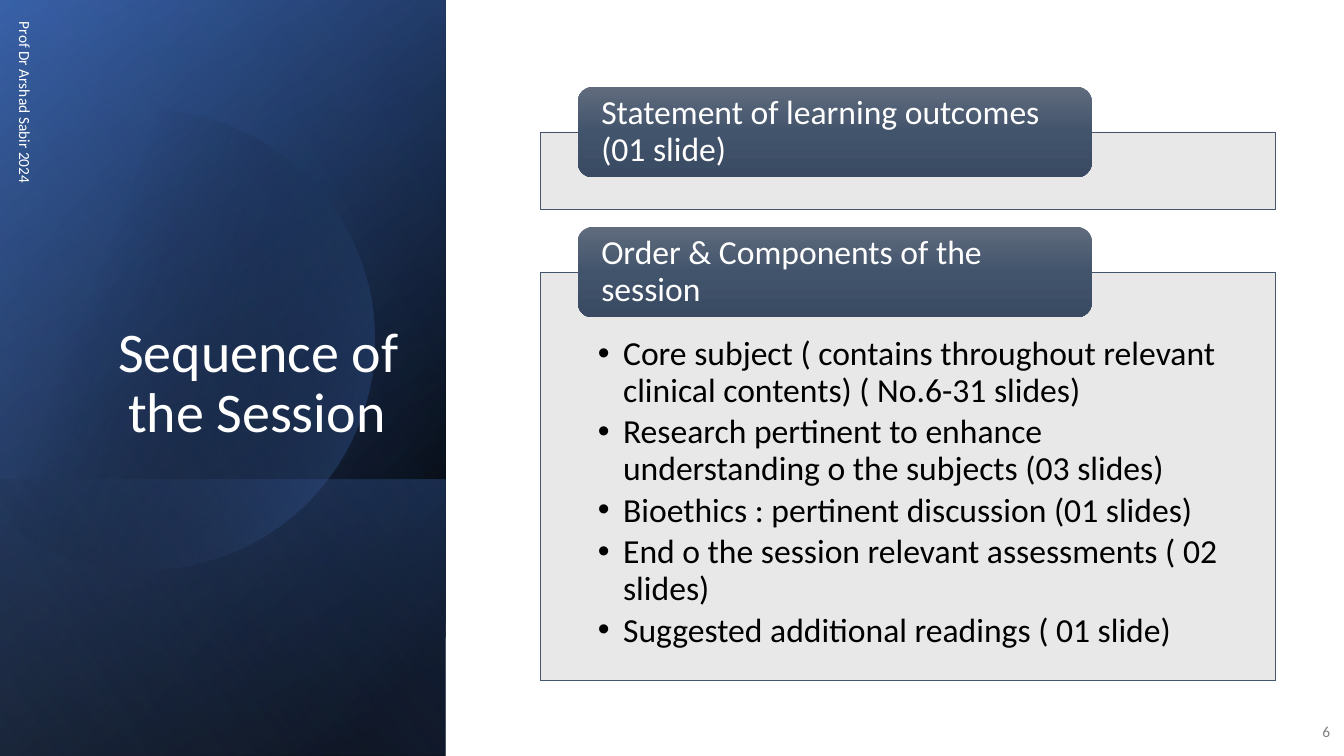
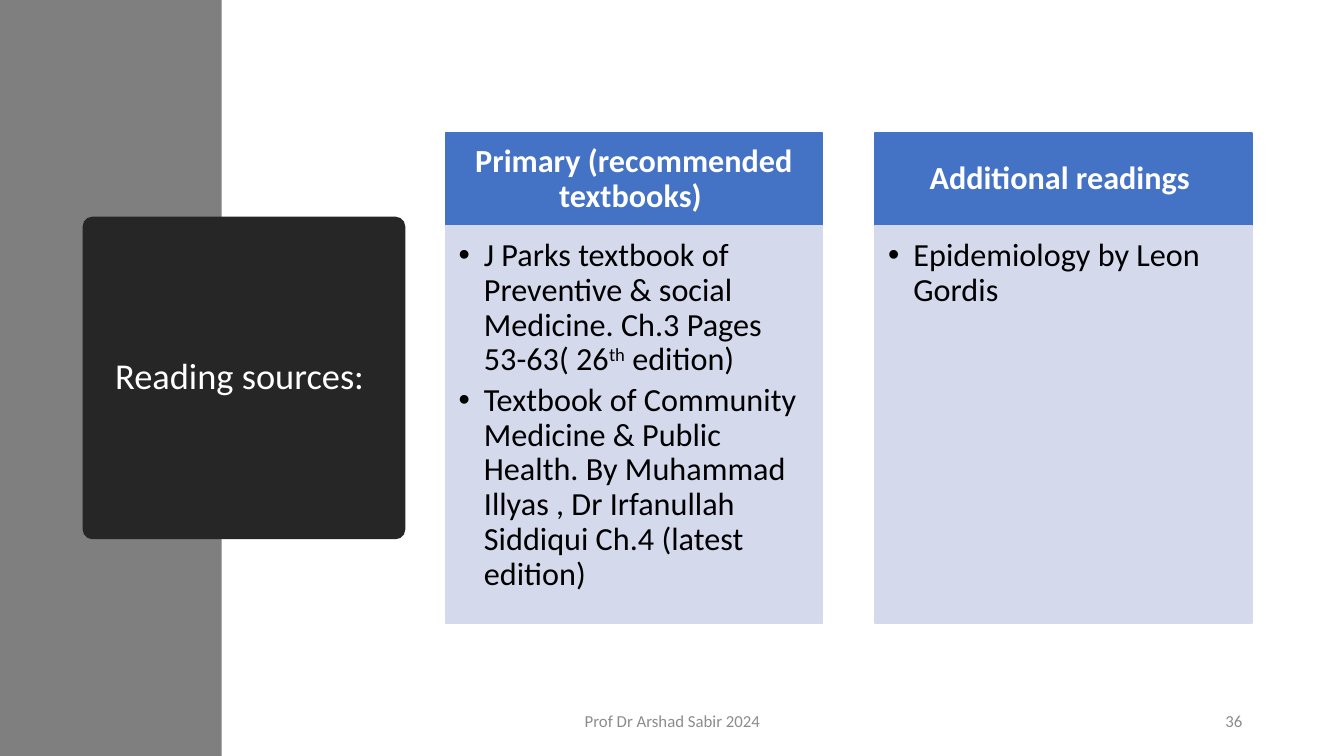
from math import cos, radians, sin

from pptx import Presentation
from pptx.dml.color import RGBColor
from pptx.enum.shapes import MSO_SHAPE
from pptx.enum.text import MSO_ANCHOR, PP_ALIGN
from pptx.oxml import parse_xml
from pptx.oxml.ns import nsdecls, qn
from pptx.util import Inches, Pt

FONT = "Calibri"
WHITE, BLACK, BLUE = "FFFFFF", "000000", "4472C4"
SLATE, PALE, LILAC = "44546A", "E9E8E8", "D4D9EC"
GREY, DARK, MUTED = "7F7F7F", "262626", "8C8C8C"
CREDIT = "Prof Dr Arshad Sabir 2024"
TAB = [(0, "606B7D", 100), (50, "42546C", 100), (100, "394A62", 100)]
INSET = (0.1, 0.05, 0.1, 0.05)
LEFT, CENTER, RIGHT = PP_ALIGN.LEFT, PP_ALIGN.CENTER, PP_ALIGN.RIGHT
TOP, MIDDLE, BOTTOM = MSO_ANCHOR.TOP, MSO_ANCHOR.MIDDLE, MSO_ANCHOR.BOTTOM


def color(code):
    return RGBColor.from_string(code)


def shade(shape, stops, angle):
    """Fill with a linear gradient; stops are (position, colour, opacity)."""
    marks = "".join(
        f'<a:gs pos="{pos * 1000}"><a:srgbClr val="{code}">'
        f'<a:alpha val="{alpha * 1000}"/></a:srgbClr></a:gs>'
        for pos, code, alpha in stops)
    grad = parse_xml(
        f'<a:gradFill {nsdecls("a")}><a:gsLst>{marks}</a:gsLst>'
        f'<a:lin ang="{angle * 60000}" scaled="0"/></a:gradFill>')
    shape.fill.background()
    props = shape._element.spPr
    props.replace(props.find(qn("a:noFill")), grad)


def box(slide, at, fill=None, line=None, width=1, kind=MSO_SHAPE.RECTANGLE):
    shape = slide.shapes.add_shape(kind, *map(Inches, at))
    shape.shadow.inherit = False
    if fill:
        shape.fill.solid()
        shape.fill.fore_color.rgb = color(fill)
    if line:
        shape.line.color.rgb = color(line)
        shape.line.width = Pt(width)
    else:
        shape.line.fill.background()
    return shape


def bullet(para):
    props = para._p.get_or_add_pPr()
    props.set("marL", str(Inches(0.25)))
    props.set("indent", str(-Inches(0.25)))
    props.append(parse_xml(f'<a:buFont {nsdecls("a")} typeface="Arial"/>'))
    props.append(parse_xml(f'<a:buChar {nsdecls("a")} char="•"/>'))


def write(shape, lines, size, code, align=LEFT, anchor=MIDDLE, inset=INSET,
          bold=False, dots=False, space=0.9):
    """Put lines in a shape; text between two ^ signs is superscript."""
    frame = shape.text_frame
    frame.word_wrap = True
    frame.vertical_anchor = anchor
    (frame.margin_left, frame.margin_top,
     frame.margin_right, frame.margin_bottom) = map(Inches, inset)
    for i, line in enumerate(lines):
        para = frame.add_paragraph() if i else frame.paragraphs[0]
        para.alignment = align
        para.line_spacing = space
        if dots:
            para.space_after = Pt(4)
            bullet(para)
        for j, part in enumerate(line.split("^")):
            run = para.add_run()
            run.text = part
            if j % 2:
                run._r.get_or_add_rPr().set("baseline", "30000")
        font = para.font
        font.name, font.size, font.bold = FONT, Pt(size), bold
        font.color.rgb = color(code)


def label(slide, at, text, size, code, align=LEFT, anchor=MIDDLE, space=1.0):
    shape = slide.shapes.add_textbox(*map(Inches, at))
    write(shape, [text], size, code, align, anchor, space=space)
    return shape


def layer(slide, at, stops, angle):
    """A gradient sheet, turned a quarter and mirrored."""
    shape = box(slide, at)
    shade(shape, stops, angle)
    shape._element.spPr.xfrm.set("flipH", "1")
    shape.rotation = 90


def disc(slide, x, y, radius):
    """A circle cut off at the slide's left edge."""
    dots = [(Inches(x + radius * cos(radians(deg))),
             Inches(y + radius * sin(radians(deg))))
            for deg in range(-129, 130, 3)]
    path = slide.shapes.build_freeform(*dots[0])
    path.add_line_segments(dots[1:])
    shape = path.convert_to_shape()
    shape.shadow.inherit = False
    shape.line.fill.background()
    shade(shape, [(29, BLACK, 0), (100, BLUE, 43)], 20)


def panel(slide):
    full = (-1.54, 1.54, 7.5, 4.42)
    layer(slide, full, [(8, BLACK, 100), (100, "2F5597", 100)], 50)
    layer(slide, full, [(0, BLACK, 0), (99, BLUE, 46)], 30)
    layer(slide, (0.84, 3.92, 2.74, 4.42),
          [(2, BLUE, 29), (100, BLACK, 30)], 130)
    disc(slide, 1.43, 3.37, 2.28)
    layer(slide, full, [(0, BLACK, 0), (99, "8FAADC", 11)], 120)


def section(slide, top, height, head, items=()):
    body = box(slide, (5.36, top, 7.29, height), PALE, SLATE, 0.5)
    if items:
        write(body, items, 24, BLACK, anchor=TOP,
              inset=(0.57, 0.64, 0.57, 0.19), dots=True)
    tab = box(slide, (5.73, top - 0.45, 5.1, 0.9),
              kind=MSO_SHAPE.ROUNDED_RECTANGLE)
    shade(tab, TAB, 90)
    write(tab, [head], 24, WHITE, inset=(0.19, 0, 0.19, 0))


def column(slide, left, head, items):
    top = box(slide, (left, 1.32, 3.74, 0.92), BLUE, BLUE)
    write(top, [head], 23, WHITE, CENTER, inset=(0.18, 0.1, 0.18, 0.1),
          bold=True)
    body = box(slide, (left, 2.24, 3.74, 3.94), LILAC, LILAC)
    write(body, items, 23, BLACK, anchor=TOP, inset=(0.13, 0.13, 0.18, 0.2),
          dots=True)


def order(slide):
    panel(slide)
    label(slide, (0.64, 1.84, 3.41, 2.62), "Sequence of the Session ",
          40, WHITE, RIGHT, BOTTOM, 0.9)
    label(slide, (-2, 2.17, 4.5, 0.4), CREDIT, 11, WHITE).rotation = 90
    label(slide, (12.8, 7.06, 0.49, 0.4), "6", 11, "808080", RIGHT)
    section(slide, 1.31, 0.77, "Statement of learning outcomes (01 slide)")
    section(slide, 2.7, 4.05, "Order & Components of the session", [
        "Core subject ( contains throughout relevant clinical contents) "
        "( No.6-31 slides)",
        "Research pertinent to enhance understanding o the subjects "
        "(03 slides)",
        "Bioethics : pertinent discussion (01 slides)",
        "End o the session relevant assessments ( 02 slides)",
        "Suggested additional readings ( 01 slide)"])


def sources(slide):
    box(slide, (0, 0, 2.2, 7.5), GREY)
    title = box(slide, (0.82, 2.15, 3.2, 3.2), DARK,
                kind=MSO_SHAPE.ROUNDED_RECTANGLE)
    title.adjustments[0] = 0.03
    write(title, ["Reading sources: "], 26, WHITE, CENTER)
    column(slide, 4.42, "Primary (recommended textbooks) ", [
        "J Parks textbook of Preventive & social Medicine. Ch.3 Pages "
        "53-63( 26^th^ edition)",
        "Textbook of Community Medicine & Public Health. By Muhammad "
        "Illyas , Dr Irfanullah Siddiqui Ch.4 (latest edition)"])
    column(slide, 8.68, "Additional readings ",
           ["Epidemiology by Leon Gordis"])
    label(slide, (4.42, 6.95, 4.5, 0.4), CREDIT, 12, MUTED, CENTER)
    label(slide, (9.42, 6.95, 3, 0.4), "36", 12, MUTED, RIGHT)


def main():
    deck = Presentation()
    deck.slide_width, deck.slide_height = Inches(13.33), Inches(7.5)
    for draw in (order, sources):
        draw(deck.slides.add_slide(deck.slide_layouts[6]))
    deck.save("out.pptx")


if __name__ == "__main__":
    main()
